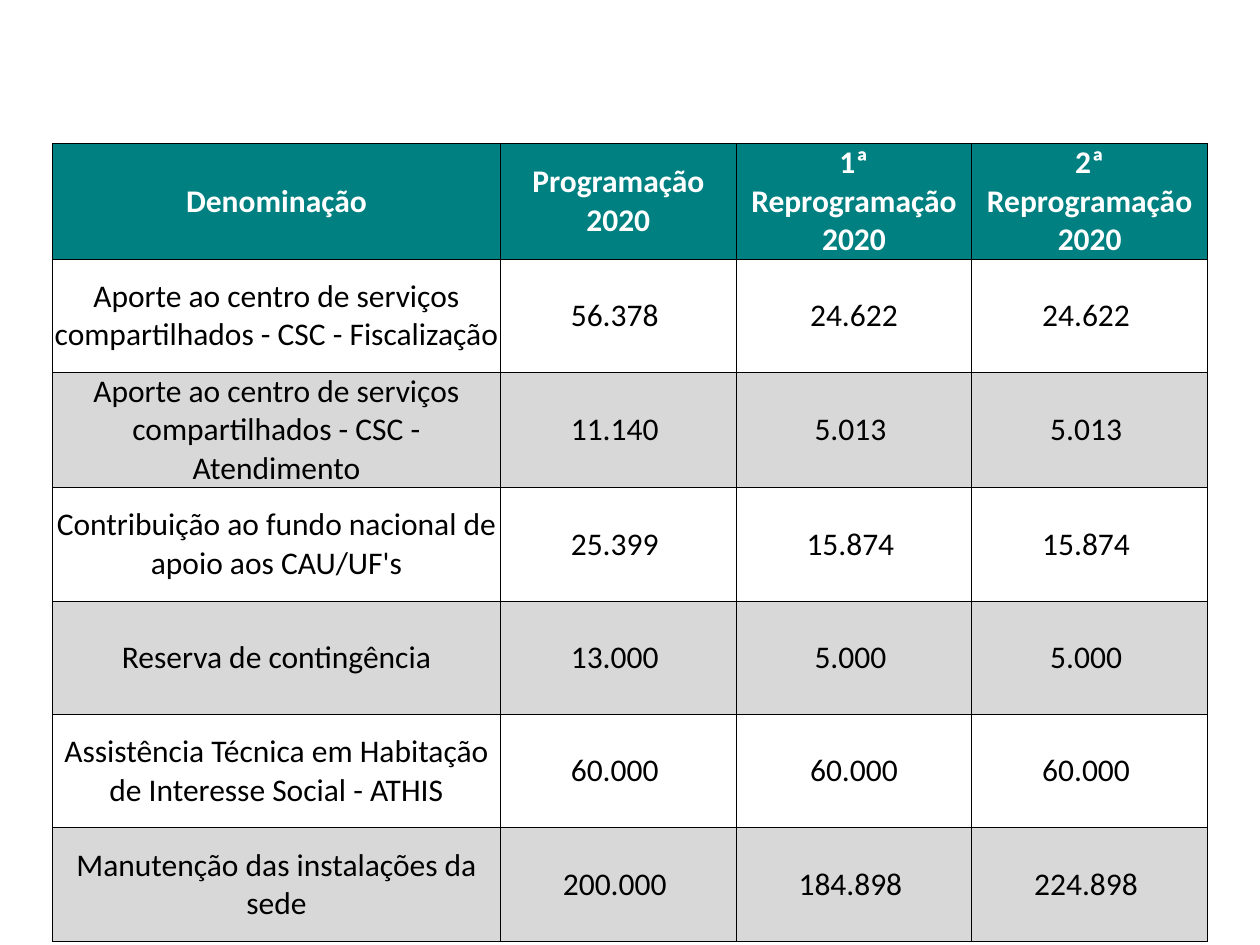
from pptx import Presentation
from pptx.dml.color import RGBColor
from pptx.enum.text import MSO_ANCHOR as Anchor, PP_ALIGN as Align
from pptx.oxml import parse_xml
from pptx.oxml.ns import nsdecls
from pptx.util import Pt

HEADER = ["Denominação", "Programação 2020", "1ª Reprogramação 2020", "2ª Reprogramação 2020"]
BUDGET = [
    ["Aporte ao centro de serviços compartilhados - CSC - Fiscalização", "56.378 ", "24.622", "24.622 "],
    ["Aporte ao centro de serviços compartilhados - CSC - Atendimento", "11.140 ", "5.013 ", "5.013 "],
    ["Contribuição ao fundo nacional de apoio aos CAU/UF's", "25.399 ", "15.874 ", "15.874 "],
    ["Reserva de contingência", "13.000 ", "5.000 ", "5.000 "],
    ["Assistência Técnica em Habitação de Interesse Social - ATHIS", "60.000 ", "60.000", "60.000 "],
    ["Manutenção das instalações da sede", "200.000 ", "184.898 ", "224.898 "],
]
TEAL, WHITE, GREY, BLACK = "008080", "FFFFFF", "D8D8D8", "000000"
LEFT, TOP, ROW_HEIGHT = 30, 82, 64.8
WIDTHS = [256] + [134.7] * 3


def color(value):
    return RGBColor.from_string(value)


def add_borders(cell, value, width):
    properties = cell._tc.get_or_add_tcPr()
    for side in ("lnL", "lnR", "lnT", "lnB"):
        properties.append(parse_xml(
            f'<a:{side} {nsdecls("a")} w="{Pt(width)}"><a:solidFill>'
            f'<a:srgbClr val="{value}"/></a:solidFill></a:{side}>'))


def fill_cell(cell, text, fill, ink, bold):
    cell.margin_left = cell.margin_right = cell.margin_top = cell.margin_bottom = 0
    cell.vertical_anchor = Anchor.MIDDLE
    add_borders(cell, BLACK, 0.5)
    cell.fill.solid()
    cell.fill.fore_color.rgb = color(fill)
    cell.text = text
    para = cell.text_frame.paragraphs[0]
    para.alignment = Align.CENTER
    para.font.name = "Calibri"
    para.font.size = Pt(18)
    para.font.bold = bold
    para.font.color.rgb = color(ink)


def main():
    deck = Presentation()
    deck.slide_width, deck.slide_height = Pt(720), Pt(540)
    page = deck.slides.add_slide(deck.slide_layouts[6])
    rows = [HEADER] + BUDGET
    table = page.shapes.add_table(
        len(rows), len(WIDTHS), Pt(LEFT), Pt(TOP),
        Pt(sum(WIDTHS)), Pt(ROW_HEIGHT * len(rows))).table
    for column, width in zip(table.columns, WIDTHS):
        column.width = Pt(width)
    for index, texts in enumerate(rows):
        table.rows[index].height = Pt(ROW_HEIGHT)
        is_header = index == 0
        fill = TEAL if is_header else (WHITE if index % 2 else GREY)
        ink = WHITE if is_header else BLACK
        for cell, text in zip(table.rows[index].cells, texts):
            fill_cell(cell, text, fill, ink, is_header)
    deck.save("out.pptx")


if __name__ == "__main__":
    main()
